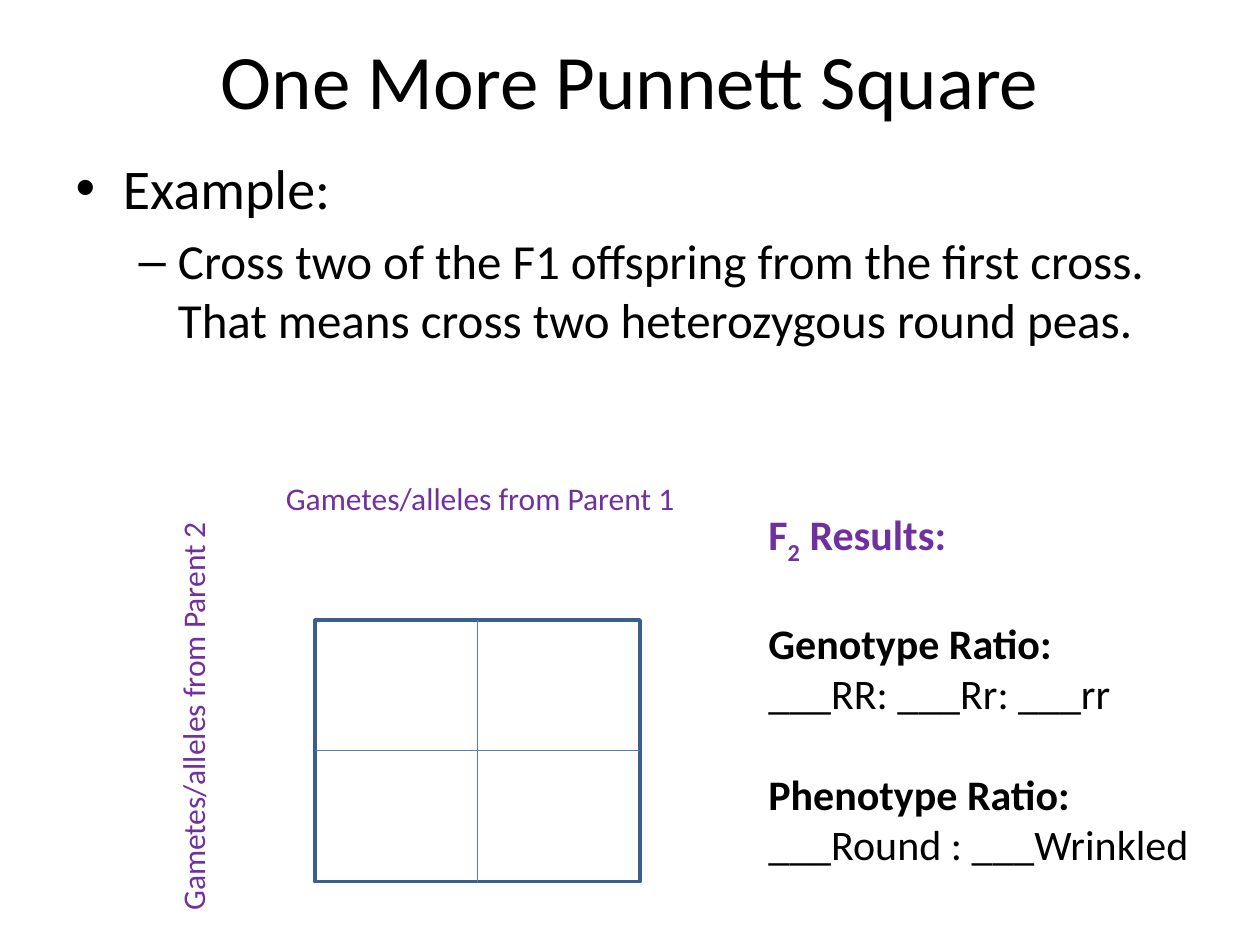
from pptx import Presentation, util as u
from pptx.dml.color import RGBColor
from pptx.enum import shapes, text
from pptx.oxml.ns import qn
from lxml import etree

prs = Presentation()
prs.slide_width, prs.slide_height = u.Inches(10), u.Inches(7.5)
W, H = prs.slide_width, prs.slide_height
PURPLE, BLACK = "7030A0", "000000"


def paint(font, size, color, bold=False):
    font.name, font.size, font.bold = "Calibri", u.Pt(size), bold
    font.color.rgb = RGBColor.from_string(color)


def place(sp, x, y, w, h):
    """Set position and size as shares of the slide's width and height."""
    sp.left, sp.top, sp.width, sp.height = (
        int(W * x), int(H * y), int(W * w), int(H * h))


s = prs.slides.add_slide(prs.slide_layouts[1])

# Title and example
title, body = s.placeholders
place(title, 0.05, 0, 0.9, 1 / 6)
title.text_frame.text = "One More Punnett Square"
paint(title.text_frame.paragraphs[0].runs[0].font, 44, BLACK)

place(body, 0.05, 0.156, 0.9, 0.737)
tf = body.text_frame
tf.text = ("Example:\nCross two of the F1 offspring from the first cross.  "
           "That means cross two heterozygous round peas.")
for level, (p, size) in enumerate(zip(tf.paragraphs, (32, 28))):
    p.level = level
    paint(p.runs[0].font, size, BLACK)

# Punnett square: one frame, joined across the middle of its sides
square = s.shapes.add_group_shape()
frame = square.shapes.add_shape(shapes.MSO_SHAPE.RECTANGLE, 0, 0, 1, 1)
place(frame, 0.25, 0.656, 0.258, 0.277)
frame.shadow.inherit = False
frame.fill.solid()
frame.fill.fore_color.rgb = RGBColor.from_string("FFFFFF")
frame.line.color.rgb = RGBColor.from_string("3A5F8C")
frame.line.width = u.Pt(2)
for begin, end in ((0, 2), (1, 3)):
    divider = square.shapes.add_connector(shapes.MSO_CONNECTOR.STRAIGHT, 0, 0, 0, 0)
    divider.begin_connect(frame, begin)
    divider.end_connect(frame, end)
    divider.line.color.rgb = RGBColor.from_string("4B7EBC")
    divider.line.width = u.Pt(0.75)
    etree.SubElement(divider._element.spPr, qn("a:effectLst"))

# Parent labels along the top and the left side
for parent, box, vert in ((1, (0.217, 0.5, 0.342, 0.054), "horz"),
                          (2, (0.133, 0.533, 0.05, 0.444), "vert270")):
    label = s.shapes.add_textbox(0, 0, 1, 1)
    place(label, *box)
    tf = label.text_frame
    tf.word_wrap = True
    tf.text = f"Gametes/alleles from Parent {parent}"
    paint(tf.paragraphs[0].runs[0].font, 18, PURPLE)
    tf._txBody.bodyPr.set("vert", vert)

# Results: headings are bold, with a line's space above
results = s.shapes.add_textbox(0, 0, 1, 1)
place(results, 0.6, 0.532, 0.392, 0.39)
tf = results.text_frame
tf.word_wrap = True
p = tf.paragraphs[0]
for part in ("F", "2", " Results:"):
    r = p.add_run()
    r.text = part
    paint(r.font, 24, PURPLE, True)
p.runs[1].font._element.set("baseline", "-25000")
for heading, ratio in (("Genotype Ratio:", "___RR: ___Rr: ___rr"),
                       ("Phenotype Ratio:", "___Round : ___Wrinkled")):
    for line, bold in ((heading, True), (ratio, False)):
        p = tf.add_paragraph()
        p.text = line
        p.space_before = u.Pt(29 if bold else 0)
        paint(p.runs[0].font, 24, BLACK, bold)

prs.save("out.pptx")
